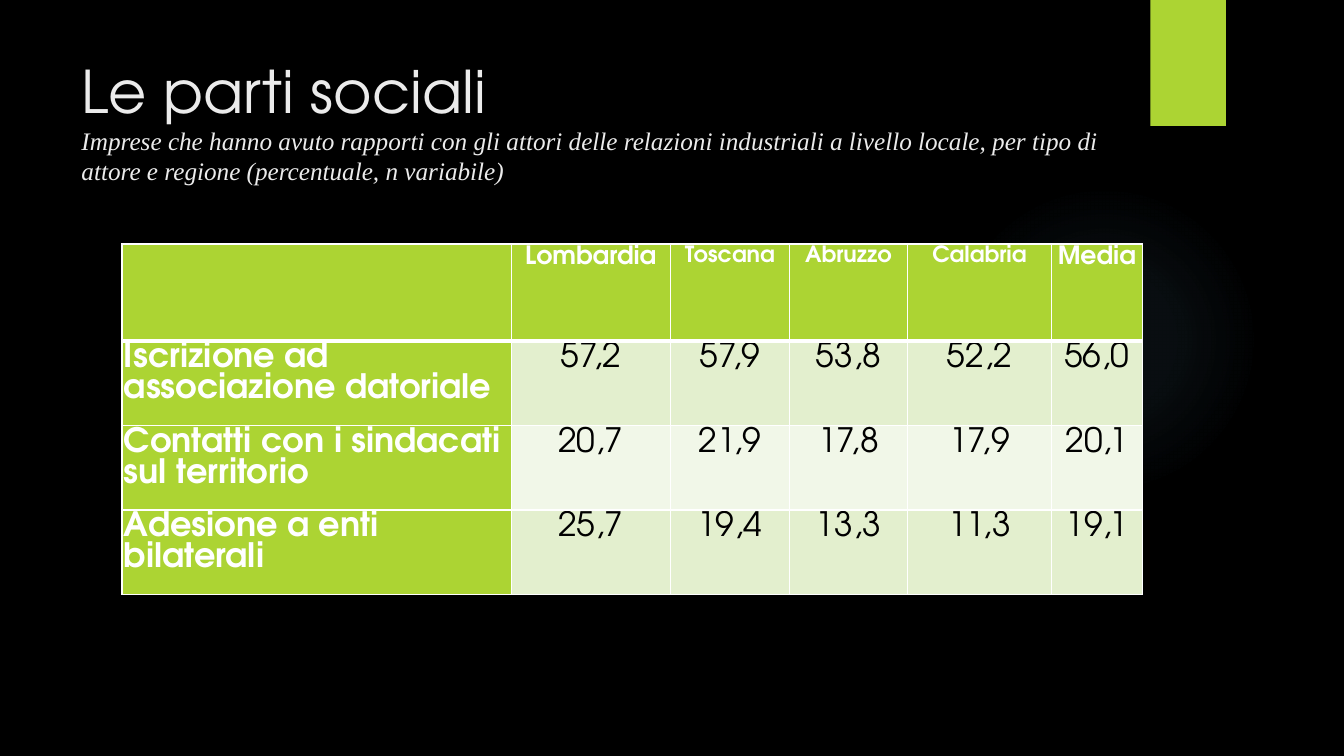
from lxml.etree import SubElement
from pptx import Presentation
from pptx.dml.color import RGBColor
from pptx.enum.shapes import MSO_SHAPE
from pptx.enum.text import MSO_ANCHOR, PP_ALIGN
from pptx.oxml import parse_xml
from pptx.oxml.ns import nsdecls, qn
from pptx.util import Inches, Pt

COLORS = {"black": "000000", "white": "FFFFFF", "title": "EBEBEB", "green": "ACD433",
          "band": "E3EFCE", "light": "F1F7E8", "glow": "7AC4F0"}
SANS, SERIF = "TeX Gyre Adventor", "Times New Roman"
COLUMNS = [3.86, 1.58, 1.18, 1.17, 1.43, 0.9]
ROWS = [0.96, 0.81, 0.81, 0.81]
DATA = [
    ["", "Lombardia", "Toscana", "Abruzzo", "Calabria", "Media"],
    ["Iscrizione ad associazione datoriale", "57,2", "57,9", "53,8", "52,2", "56,0"],
    ["Contatti con i sindacati sul territorio", "20,7", "21,9", "17,8", "17,9", "20,1"],
    ["Adesione a enti bilaterali", "25,7", "19,4", "13,3", "11,3", "19,1"],
]


def rgb(name):
    return RGBColor.from_string(COLORS[name])


class SlideBuilder:
    """Draws styled elements on the current slide."""

    def __init__(self, prs):
        self.slide = prs.slides.add_slide(prs.slide_layouts[6])
        fill = self.slide.background.fill
        fill.solid()
        fill.fore_color.rgb = rgb("black")

    def shape(self, kind, box, color):
        sp = self.slide.shapes.add_shape(kind, *map(Inches, box))
        sp.shadow.inherit = False
        sp.line.fill.background()
        sp.fill.solid()
        sp.fill.fore_color.rgb = rgb(color)
        return sp

    def glow(self, box, color, stops):
        sp = self.shape(MSO_SHAPE.OVAL, box, color)
        marks = "".join(
            f'<a:gs pos="{pos * 1000}"><a:srgbClr val="{COLORS[color]}">'
            f'<a:alpha val="{alpha * 1000}"/></a:srgbClr></a:gs>' for pos, alpha in stops)
        grad = parse_xml(
            f'<a:gradFill {nsdecls("a")} rotWithShape="1"><a:gsLst>{marks}</a:gsLst>'
            '<a:path path="circle"><a:fillToRect l="50000" t="50000" r="50000" b="50000"/>'
            '</a:path></a:gradFill>')
        spPr = sp.element.spPr
        spPr.replace(spPr.find(qn("a:solidFill")), grad)

    def style(self, font, name, size, color, bold=False, italic=False):
        font.name, font.size = name, Pt(size)
        font.bold, font.italic = bold, italic
        font.color.rgb = rgb(color)

    def title(self, box, heading, subtitle):
        tf = self.slide.shapes.add_textbox(*map(Inches, box)).text_frame
        tf.word_wrap = True
        tf.vertical_anchor = MSO_ANCHOR.TOP
        p = tf.paragraphs[0]
        r = p.add_run()
        r.text = heading
        self.style(r.font, SANS, 42, "title")
        p.add_line_break()
        r = p.add_run()
        r.text = subtitle
        self.style(r.font, SERIF, 18, "title", italic=True)

    def borders(self, cell, bottom):
        tcPr = cell._tc.get_or_add_tcPr()
        for i, (side, width) in enumerate(zip("LRTB", (1, 1, 1, bottom))):
            ln = parse_xml(f'<a:ln{side} {nsdecls("a")} w="{Pt(width)}"/>')
            SubElement(SubElement(ln, qn("a:solidFill")), qn("a:srgbClr")).set("val", COLORS["white"])
            tcPr.insert(i, ln)

    def cell(self, cell, text, row, col):
        header, label = row == 0, col == 0
        strong = header or label
        cell.margin_left = cell.margin_right = Inches(0.02)
        cell.margin_top = cell.margin_bottom = Inches(0.02)
        cell.fill.solid()
        cell.fill.fore_color.rgb = rgb("green" if strong else "band" if row % 2 else "light")
        self.borders(cell, 3 if header else 1)
        p = cell.text_frame.paragraphs[0]
        p.text = text
        p.alignment = PP_ALIGN.LEFT if label else PP_ALIGN.CENTER
        size = 24 if not header else 18 if text in ("Lombardia", "Media") else 16
        self.style(p.font, SANS, size, "white" if strong else "black", bold=strong)

    def table(self, left, top, widths, heights, data):
        box = map(Inches, (left, top, sum(widths), sum(heights)))
        table = self.slide.shapes.add_table(len(heights), len(widths), *box).table
        for column, width in zip(table.columns, widths):
            column.width = Inches(width)
        for i, (height, values) in enumerate(zip(heights, data)):
            table.rows[i].height = Inches(height)
            for j, text in enumerate(values):
                self.cell(table.cell(i, j), text, i, j)


def main():
    prs = Presentation()
    prs.slide_width, prs.slide_height = Inches(13.33), Inches(7.5)
    s = SlideBuilder(prs)
    s.glow((9.41, 1.83, 3.08, 3.08), "glow", [(0, 7), (36, 6), (69, 0)])
    s.shape(MSO_SHAPE.RECTANGLE, (11.41, 0, 0.75, 1.25), "green")
    s.title((0.71, 0.49, 10.29, 1.53), "Le parti sociali",
            "Imprese che hanno avuto rapporti con gli attori delle relazioni industriali "
            "a livello locale, per tipo di attore e regione (percentuale, n variabile)")
    s.table(1.21, 2.42, COLUMNS, ROWS, DATA)
    prs.save("out.pptx")


if __name__ == "__main__":
    main()
